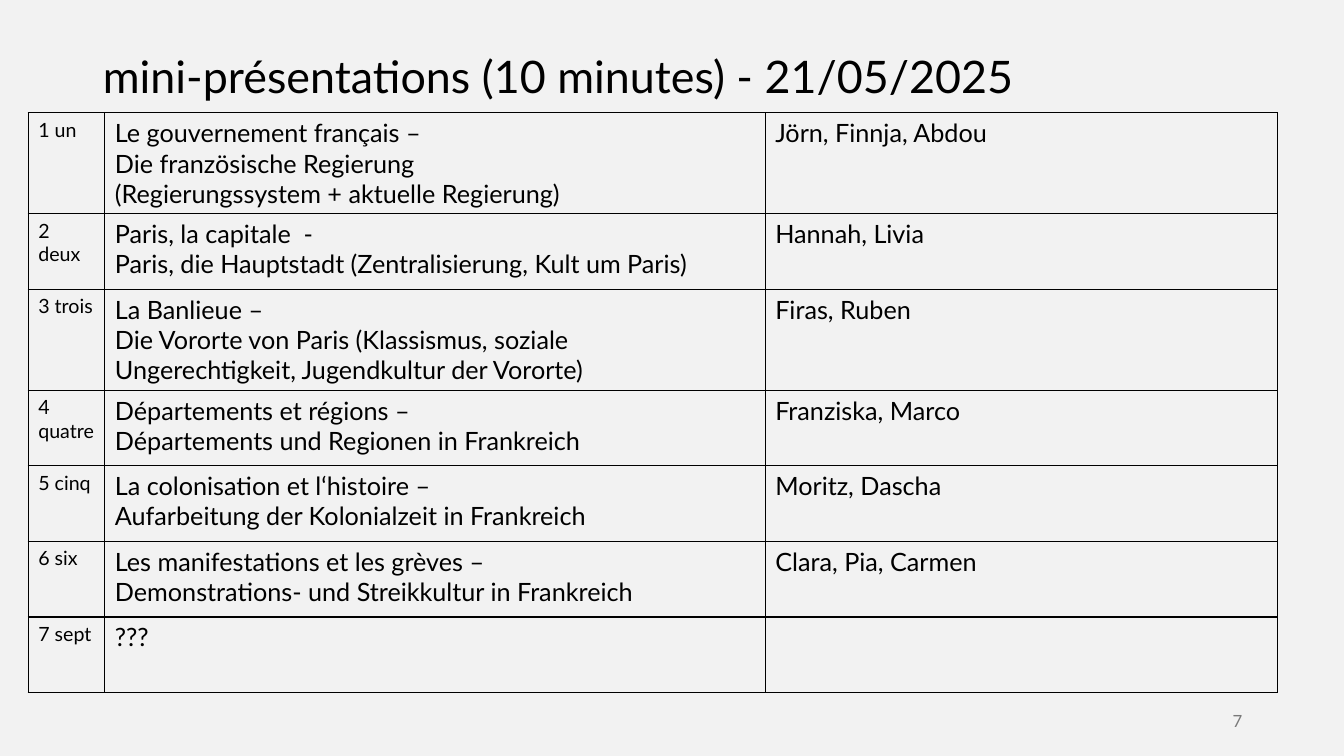
from lxml.etree import SubElement
from pptx import Presentation
from pptx.dml.color import RGBColor
from pptx.enum.text import MSO_ANCHOR, PP_ALIGN
from pptx.oxml.ns import qn
from pptx.util import Inches, Pt

COLORS = {"background": "F2F2F2", "ink": "000000", "page_number": "797979"}
FONT = "Lato"

# Table grid, in inches
TABLE_LEFT, TABLE_TOP = 0.28, 1.12
COLUMN_WIDTHS = [0.76, 6.55, 5.08]
COLUMN_SIZES = [14, 18, 18]
ROW_HEIGHT = 0.75

# Number, topic lines, presenters
TALKS = [
    ("1 un",
     ["Le gouvernement français –", "Die französische Regierung",
      "(Regierungssystem + aktuelle Regierung)"],
     "Jörn, Finnja, Abdou"),
    ("2 deux",
     ["Paris, la capitale  -",
      "Paris, die Hauptstadt (Zentralisierung, Kult um Paris)"],
     "Hannah, Livia"),
    ("3 trois",
     ["La Banlieue –",
      "Die Vororte von Paris (Klassismus, soziale Ungerechtigkeit, "
      "Jugendkultur der Vororte)"],
     "Firas, Ruben"),
    ("4 quatre",
     ["Départements et régions –", "Départements und Regionen in Frankreich"],
     "Franziska, Marco"),
    ("5 cinq",
     ["La colonisation et l‘histoire –",
      "Aufarbeitung der Kolonialzeit in Frankreich"],
     "Moritz, Dascha"),
    ("6 six",
     ["Les manifestations et les grèves –",
      "Demonstrations- und Streikkultur in Frankreich"],
     "Clara, Pia, Carmen"),
    ("7 sept", ["???"], ""),
]


def color(name):
    return RGBColor.from_string(COLORS[name])


def write_lines(text_frame, lines, size, color_name="ink"):
    """Write each line as a paragraph with one formatted run."""
    for index, line in enumerate(lines):
        paragraph = text_frame.paragraphs[0] if index == 0 else text_frame.add_paragraph()
        paragraph.font.size = Pt(size)
        if line:
            run = paragraph.add_run()
            run.text = line
            run.font.name = FONT
            run.font.size = Pt(size)
            run.font.color.rgb = color(color_name)


def add_borders(cell):
    """Draw a thin line on all four sides; borders must precede the fill."""
    properties = cell._tc.get_or_add_tcPr()
    for side in ("a:lnL", "a:lnR", "a:lnT", "a:lnB"):
        line = SubElement(properties, qn(side), w=str(Pt(1)))
        fill = SubElement(line, qn("a:solidFill"))
        SubElement(fill, qn("a:srgbClr"), val=COLORS["ink"])


def add_title(slide, text):
    title = slide.shapes.title
    title.left, title.top = Inches(0.92), Inches(0.4)
    title.width, title.height = Inches(11.5), Inches(1.45)
    frame = title.text_frame
    frame.vertical_anchor = MSO_ANCHOR.TOP
    frame.margin_top = Inches(0.14)
    write_lines(frame, [text], 32)
    frame.paragraphs[0].alignment = PP_ALIGN.LEFT
    frame.paragraphs[0].line_spacing = 0.9


def add_talk_table(slide):
    table = slide.shapes.add_table(
        len(TALKS), len(COLUMN_WIDTHS), Inches(TABLE_LEFT), Inches(TABLE_TOP),
        Inches(sum(COLUMN_WIDTHS)), Inches(ROW_HEIGHT * len(TALKS))).table
    table.first_row = table.horz_banding = False
    for column, width in zip(table.columns, COLUMN_WIDTHS):
        column.width = Inches(width)
    for row, (number, topic, presenters) in zip(table.rows, TALKS):
        row.height = Inches(ROW_HEIGHT)
        contents = [[number], topic, [presenters]]
        for cell, lines, size in zip(row.cells, contents, COLUMN_SIZES):
            add_borders(cell)
            cell.fill.background()
            write_lines(cell.text_frame, lines, size)


def add_page_number(slide, number):
    box = slide.shapes.add_textbox(Inches(9.42), Inches(6.95), Inches(3), Inches(0.4))
    frame = box.text_frame
    frame.word_wrap = True
    frame.vertical_anchor = MSO_ANCHOR.MIDDLE
    write_lines(frame, [number], 12, "page_number")
    frame.paragraphs[0].alignment = PP_ALIGN.RIGHT


def main():
    presentation = Presentation()
    presentation.slide_width, presentation.slide_height = Inches(13.33), Inches(7.5)
    title_only = presentation.slide_layouts[5]
    slide = presentation.slides.add_slide(title_only)
    slide.background.fill.solid()
    slide.background.fill.fore_color.rgb = color("background")

    add_title(slide, "mini-présentations (10 minutes) - 21/05/2025")
    add_talk_table(slide)
    add_page_number(slide, "7")
    presentation.save("out.pptx")


if __name__ == "__main__":
    main()
